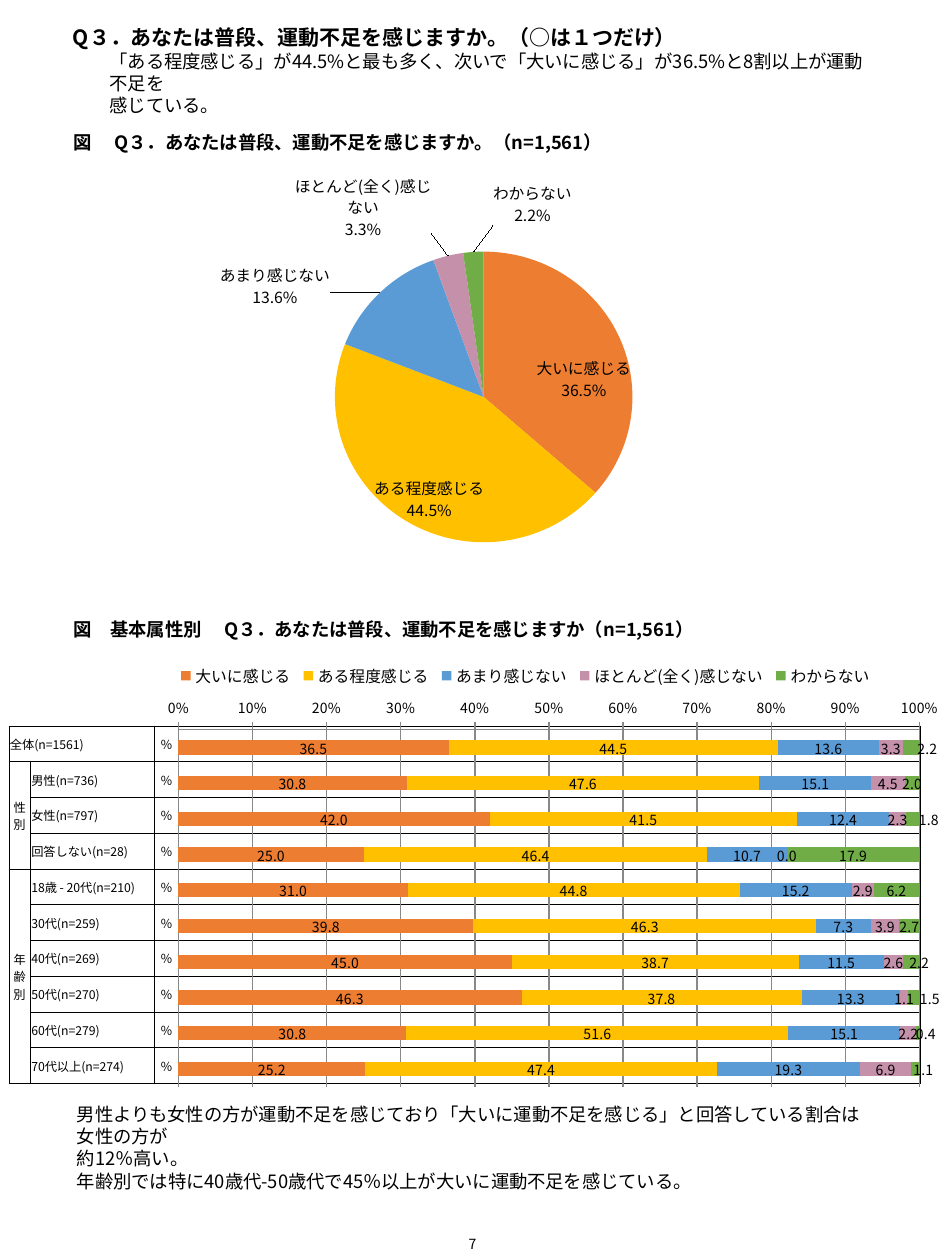
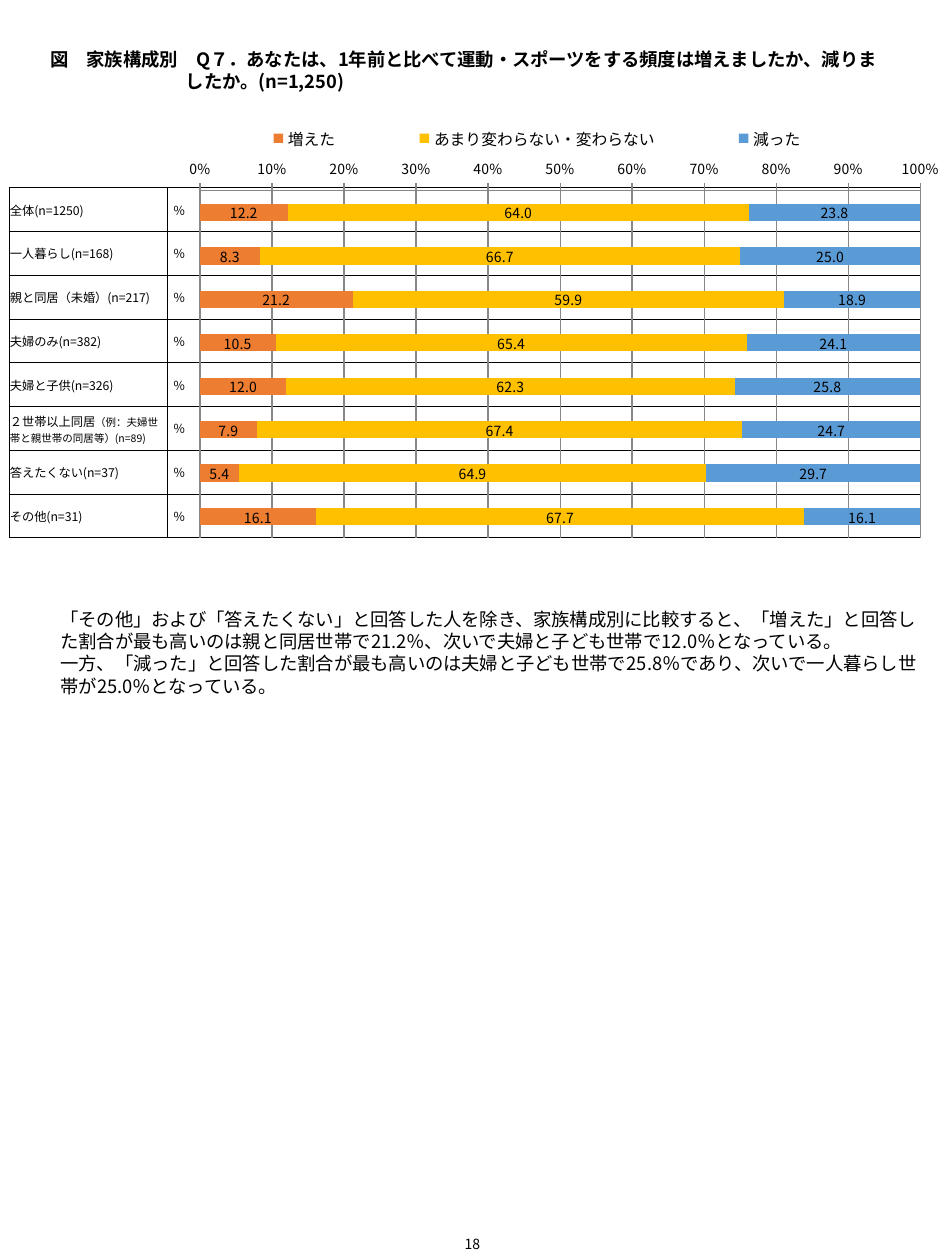
from dataclasses import dataclass, field
from typing import Any

from lxml.etree import SubElement
from pptx import Presentation
from pptx.chart.chart import Chart
from pptx.chart.data import CategoryChartData
from pptx.dml.color import RGBColor
from pptx.enum.chart import XL_CHART_TYPE, XL_LABEL_POSITION, XL_LEGEND_POSITION, XL_TICK_MARK
from pptx.enum.text import MSO_ANCHOR, PP_ALIGN
from pptx.oxml import parse_xml
from pptx.oxml.ns import nsdecls, qn
from pptx.slide import Slide
from pptx.table import Table
from pptx.util import Cm, Pt

FONT = "Noto Sans CJK JP"
BLACK = RGBColor(0x00, 0x00, 0x00)
GRAY = RGBColor(0x88, 0x88, 0x88)
ORANGE = RGBColor(0xED, 0x7D, 0x31)
YELLOW = RGBColor(0xFF, 0xC0, 0x00)
BLUE = RGBColor(0x5B, 0x9B, 0xD5)
MAUVE = RGBColor(0xC4, 0x90, 0xAA)
GREEN = RGBColor(0x70, 0xAD, 0x47)
PALETTE = (ORANGE, YELLOW, BLUE, MAUVE, GREEN)
LINE_RATIO = 1.2
BAR_PLOT = (0.037, 0.178, 0.925, 0.75)
PIE_PLOT = (0.255, 0.2, 0.519, 0.75)
LEGEND_AREA = (0.03, 0.03, 0.88, 0.07)


@dataclass(frozen=True)
class Frame:
    """Position and size in centimetres."""

    left: float
    top: float
    width: float
    height: float

    def lengths(self) -> tuple[Cm, Cm, Cm, Cm]:
        """Return the four lengths for a shape call."""
        return Cm(self.left), Cm(self.top), Cm(self.width), Cm(self.height)


@dataclass(frozen=True)
class Line:
    """One paragraph of a text box."""

    text: str
    size: float = 10.5
    bold: bool = False
    margin: float = 0
    indent: float = 0


@dataclass(frozen=True)
class RowTable:
    """Row headings that stand beside a bar chart."""

    frame: Frame
    widths: tuple[float, ...]
    labels: tuple[str, ...]
    groups: tuple[tuple[str, int, int], ...] = ()


@dataclass(frozen=True)
class BarChart:
    """Stacked bars, with label offsets by series and point."""

    frame: Frame
    series: dict[str, tuple[float, ...]]
    offsets: dict[int, dict[int, tuple[float, float]]] = field(default_factory=dict)


def style_font(font: Any, size: float, bold: bool = False) -> None:
    """Apply the deck typeface for Latin and East Asian text."""
    font.size, font.bold, font.name = Pt(size), bold, FONT
    font.color.rgb = BLACK
    SubElement(font._rPr, qn("a:ea"), typeface=FONT)


def write(para: Any, text: str, *, size: float, bold: bool = False) -> None:
    """Add text to a paragraph, breaking lines at newlines."""
    for index, part in enumerate(text.split("\n")):
        if index:
            para.add_line_break()
        span = para.add_run()
        span.text = part
        style_font(span.font, size, bold)


def add_text(page: Slide, frame: Frame, *lines: Line, anchor: MSO_ANCHOR = MSO_ANCHOR.TOP,
             align: PP_ALIGN = PP_ALIGN.LEFT, wrap: bool = True) -> None:
    """Draw a text box with one paragraph for each line."""
    text_frame = page.shapes.add_textbox(*frame.lengths()).text_frame
    text_frame.word_wrap, text_frame.vertical_anchor = wrap, anchor
    for index, line in enumerate(lines):
        para = text_frame.add_paragraph() if index else text_frame.paragraphs[0]
        para.alignment, para.line_spacing = align, Pt(line.size * LINE_RATIO)
        properties = para._p.get_or_add_pPr()
        properties.set("marL", str(Cm(line.margin)))
        properties.set("indent", str(Cm(line.indent)))
        write(para, line.text, size=line.size, bold=line.bold)


def add_page_number(page: Slide, number: int) -> None:
    """Write the page number at the foot."""
    add_text(page, Frame(9.1, 24.79, 0.85, 0.61), Line(str(number), size=8),
             align=PP_ALIGN.CENTER, wrap=False)


def set_borders(cell: Any, sides: str) -> None:
    """Draw hairlines on the given sides and clear the others."""
    cell.fill.background()
    for index, side in enumerate("LRTB"):
        paint = '<a:solidFill><a:srgbClr val="000000"/></a:solidFill>' if side in sides else "<a:noFill/>"
        border = f'<a:ln{side} {nsdecls("a")} w="{Pt(0.25)}">{paint}</a:ln{side}>'
        cell._tc.get_or_add_tcPr().insert(index, parse_xml(border))


def fill_cell(cell: Any, text: str, align: PP_ALIGN = PP_ALIGN.LEFT) -> None:
    """Put small text into a table cell."""
    para = cell.text_frame.paragraphs[0]
    para.alignment = align
    write(para, text, size=7)


def add_row_table(page: Slide, design: RowTable) -> Table:
    """Draw row headings, unit cells and the empty cells behind the bars."""
    row_count, column_count = len(design.labels), len(design.widths)
    table = page.shapes.add_table(row_count, column_count, *design.frame.lengths()).table
    table.first_row = table.horz_banding = False
    for column, width in zip(table.columns, design.widths):
        column.width = Cm(width)
    unit_column = column_count - 2
    for row_index, label in enumerate(design.labels):
        table.rows[row_index].height = Cm(design.frame.height / row_count)
        grouped = any(start <= row_index < start + count for _, start, count in design.groups)
        label_column = 1 if grouped else 0
        fill_cell(table.cell(row_index, label_column), label)
        fill_cell(table.cell(row_index, unit_column), "％", PP_ALIGN.CENTER)
        if label_column < unit_column - 1:
            table.cell(row_index, label_column).merge(table.cell(row_index, unit_column - 1))
    for name, start, count in design.groups:
        head = table.cell(start, 0)
        head.merge(table.cell(start + count - 1, 0))
        fill_cell(head, name, PP_ALIGN.CENTER)
        head._tc.get_or_add_tcPr().set("vert", "eaVert")
    for row_index in range(row_count):
        for column_index in range(column_count):
            cell = table.cell(row_index, column_index)
            cell.vertical_anchor = MSO_ANCHOR.MIDDLE
            cell.margin_left = cell.margin_right = cell.margin_top = Cm(0.02)
            cell.margin_bottom = 0
            set_borders(cell, {unit_column: "LTB", unit_column + 1: "RTB"}.get(column_index, "LRTB"))
            if not cell.text:
                SubElement(cell.text_frame.paragraphs[0]._p, qn("a:endParaRPr"), sz="700")
    return table


def set_layout(parent: Any, index: int, area: tuple[float, ...], inner: bool = False) -> None:
    """Fix the place of a chart part as fractions of the chart."""
    for old in parent.findall(qn("c:layout")):
        parent.remove(old)
    target = '<c:layoutTarget val="inner"/>' if inner else ""
    modes = '<c:xMode val="edge"/><c:yMode val="edge"/>'
    values = "".join(f'<c:{name} val="{value}"/>' for name, value in zip("xywh", area))
    parent.insert(index, parse_xml(
        f'<c:layout {nsdecls("c")}><c:manualLayout>{target}{modes}{values}</c:manualLayout></c:layout>'))


def add_labels(series: Any, *, size: float, number_format: str, position: XL_LABEL_POSITION,
               offsets: dict[int, tuple[float, float]], category: bool = False) -> None:
    """Label every point of a series and shift the chosen ones."""
    labels = series.data_labels
    labels.show_value, labels.show_category_name = True, category
    labels.number_format, labels.number_format_is_linked = number_format, False
    labels.position = position
    style_font(labels.font, size)
    element = labels._element
    for old in element.findall(qn("c:showLeaderLines")):
        element.remove(old)
    if category:
        SubElement(element, qn("c:separator")).text = "\n"
    SubElement(element, qn("c:showLeaderLines"), val=str(int(category)))
    place = element.find(qn("c:dLblPos")).get("val")
    code = number_format.replace('"', "&quot;")
    separator = "<c:separator>\n</c:separator>" if category else ""
    for index, (point, (across, down)) in enumerate(offsets.items()):
        element.insert(index, parse_xml(
            f'<c:dLbl {nsdecls("c")}><c:idx val="{point}"/><c:layout><c:manualLayout>'
            f'<c:x val="{across}"/><c:y val="{down}"/></c:manualLayout></c:layout>'
            f'<c:numFmt formatCode="{code}" sourceLinked="0"/><c:dLblPos val="{place}"/>'
            f'<c:showLegendKey val="0"/><c:showVal val="1"/><c:showCatName val="{int(category)}"/>'
            f'<c:showSerName val="0"/><c:showPercent val="0"/><c:showBubbleSize val="0"/>'
            f'{separator}</c:dLbl>'))


def add_chart(page: Slide, kind: XL_CHART_TYPE, frame: Frame, categories: tuple[str, ...],
              series: dict[str, tuple[float, ...]], *, size: float, plot: tuple[float, ...]) -> Chart:
    """Place a chart without a title and fix its plot area."""
    values = CategoryChartData(number_format="0.0")
    values.categories = categories
    for name, numbers in series.items():
        values.add_series(name, numbers)
    chart = page.shapes.add_chart(kind, *frame.lengths(), values).chart
    chart.has_title = chart.has_legend = False
    style_font(chart.font, size)
    set_layout(chart._chartSpace.chart.plotArea, 0, plot, inner=True)
    return chart


def add_pie(page: Slide, frame: Frame, answers: dict[str, float],
            offsets: tuple[tuple[float, float], ...]) -> None:
    """Draw the pie of all answers."""
    chart = add_chart(page, XL_CHART_TYPE.PIE, frame, tuple(answers),
                      {"Series 1": tuple(answers.values())}, size=9, plot=PIE_PLOT)
    series = chart.plots[0].series[0]
    for index, color in enumerate(PALETTE):
        fill = series.points[index].format.fill
        fill.solid()
        fill.fore_color.rgb = color
    add_labels(series, size=9, number_format='0.0"%"', position=XL_LABEL_POSITION.OUTSIDE_END,
               offsets=dict(enumerate(offsets)), category=True)


def add_bars(page: Slide, design: BarChart) -> None:
    """Draw stacked bars with the percent axis on top."""
    count = len(next(iter(design.series.values())))
    categories = tuple(str(number) for number in range(1, count + 1))
    chart = add_chart(page, XL_CHART_TYPE.BAR_STACKED_100, design.frame, categories,
                      design.series, size=8, plot=BAR_PLOT)
    chart.category_axis.visible, chart.category_axis.reverse_order = False, True
    axis = chart.value_axis
    axis.minimum_scale, axis.maximum_scale, axis.major_unit = 0, 1, 0.1
    axis.major_tick_mark = XL_TICK_MARK.OUTSIDE
    axis.tick_labels.number_format, axis.tick_labels.number_format_is_linked = "0%", False
    style_font(axis.tick_labels.font, 8)
    for line in (axis.format.line, axis.major_gridlines.format.line):
        line.color.rgb, line.width = GRAY, Pt(0.75)
    chart.has_legend = True
    legend = chart.legend
    legend.position, legend.include_in_layout = XL_LEGEND_POSITION.TOP, False
    style_font(legend.font, 9)
    set_layout(legend._element, 1, LEGEND_AREA)
    plot = chart.plots[0]
    plot.gap_width, plot.overlap = 150, 100
    for index, (series, color) in enumerate(zip(plot.series, PALETTE)):
        series.format.fill.solid()
        series.format.fill.fore_color.rgb = color
        add_labels(series, size=8, number_format="0.0", position=XL_LABEL_POSITION.CENTER,
                   offsets=design.offsets.get(index, {}))


def build_shortage_page(page: Slide) -> None:
    """Build the page on lack of exercise."""
    add_text(page, Frame(1.22, 0.58, 16.61, 1.68),
             Line("Q３．あなたは普段、運動不足を感じますか。（○は１つだけ）", size=12, bold=True),
             Line("「ある程度感じる」が44.5%と最も多く、次いで「大いに感じる」が36.5%と8割以上が運動不足を\n"
                  "感じている。", margin=0.74), anchor=MSO_ANCHOR.MIDDLE)
    add_text(page, Frame(1.3, 22.12, 16.61, 1.6),
             Line("男性よりも女性の方が運動不足を感じており「大いに運動不足を感じる」と回答している割合は女性の方が"),
             Line("約12％高い。"),
             Line("年齢別では特に40歳代-50歳代で45％以上が大いに運動不足を感じている。"))
    for top, title in ((12.34, "図　基本属性別　 Q３．あなたは普段、運動不足を感じますか（n=1,561）"),
                       (2.51, "図　 Q３．あなたは普段、運動不足を感じますか。（n=1,561）")):
        add_text(page, Frame(1.24, top, 17.37, 0.74), Line(title, bold=True))
    add_row_table(page, RowTable(
        Frame(0.18, 14.63, 18.36, 7.21), (0.43, 2.49, 0.51, 14.93),
        ("全体(n=1561)", "男性(n=736)", "女性(n=797)", "回答しない(n=28)", "18歳 - 20代(n=210)",
         "30代(n=259)", "40代(n=269)", "50代(n=270)", "60代(n=279)", "70代以上(n=274)"),
        (("性別", 1, 3), ("年齢別", 4, 6))))
    series = {
        "大いに感じる": (36.5, 30.8, 42, 25, 31, 39.8, 45, 46.3, 30.8, 25.2),
        "ある程度感じる": (44.5, 47.6, 41.5, 46.4, 44.8, 46.3, 38.7, 37.8, 51.6, 47.4),
        "あまり感じない": (13.6, 15.1, 12.4, 10.7, 15.2, 7.3, 11.5, 13.3, 15.1, 19.3),
        "ほとんど(全く)感じない": (3.3, 4.5, 2.3, 0, 2.9, 3.9, 2.6, 1.1, 2.2, 6.9),
        "わからない": (2.2, 2, 1.8, 17.9, 6.2, 2.7, 2.2, 1.5, 0.4, 1.1),
    }
    add_pie(page, Frame(2.03, 3.51, 15.01, 8), {name: numbers[0] for name, numbers in series.items()},
            ((-0.12, 0.17), (0.11, -0.13), (-0.06, 0.05), (-0.02, -0.04), (0.08, -0.05)))
    shifts = {0: 0.02, 2: 0.02, 6: 0.01, 7: 0.02, 8: 0.01, 9: 0.01}
    add_bars(page, BarChart(Frame(3, 13, 16.15, 9.6), series,
                            {4: {point: (across, 0) for point, across in shifts.items()}}))
    add_page_number(page, 7)


def build_family_page(page: Slide) -> None:
    """Build the page on exercise frequency by family."""
    add_text(page, Frame(0.76, 0.84, 17.2, 1.14),
             Line("図　家族構成別　Q７．あなたは、1年前と比べて運動・スポーツをする頻度は増えましたか、"
                  "減りましたか。(n=1,250)", bold=True, margin=2.74, indent=-2.74))
    table = add_row_table(page, RowTable(
        Frame(0.18, 3.78, 18.36, 7.06), (3.18, 0.51, 14.67),
        ("全体(n=1250)", "一人暮らし(n=168)", "親と同居（未婚）(n=217)", "夫婦のみ(n=382)",
         "夫婦と子供(n=326)", "２世帯以上同居", "答えたくない(n=37)", "その他(n=31)")))
    write(table.cell(5, 0).text_frame.paragraphs[0], "（例：夫婦世帯と親世帯の同居等）(n=89)", size=6)
    add_text(page, Frame(0.97, 12.14, 17.78, 2.06),
             Line("「その他」および「答えたくない」と回答した人を除き、家族構成別に比較すると、「増えた」と回答した割合が"
                  "最も高いのは親と同居世帯で21.2％、次いで夫婦と子ども世帯で12.0％となっている。"),
             Line("一方、「減った」と回答した割合が最も高いのは夫婦と子ども世帯で25.8％であり、"
                  "次いで一人暮らし世帯が25.0％となっている。"))
    add_bars(page, BarChart(Frame(3.45, 2.18, 15.7, 9.35), {
        "増えた": (12.2, 8.3, 21.2, 10.5, 12, 7.9, 5.4, 16.1),
        "あまり変わらない・変わらない": (64, 66.7, 59.9, 65.4, 62.3, 67.4, 64.9, 67.7),
        "減った": (23.8, 25, 18.9, 24.1, 25.8, 24.7, 29.7, 16.1)}))
    add_page_number(page, 18)


def main() -> None:
    """Build and save the deck."""
    deck = Presentation()
    deck.slide_width, deck.slide_height = Cm(19.05), Cm(25.4)
    for build in (build_shortage_page, build_family_page):
        build(deck.slides.add_slide(deck.slide_layouts[6]))
    deck.save("out.pptx")


if __name__ == "__main__":
    main()
